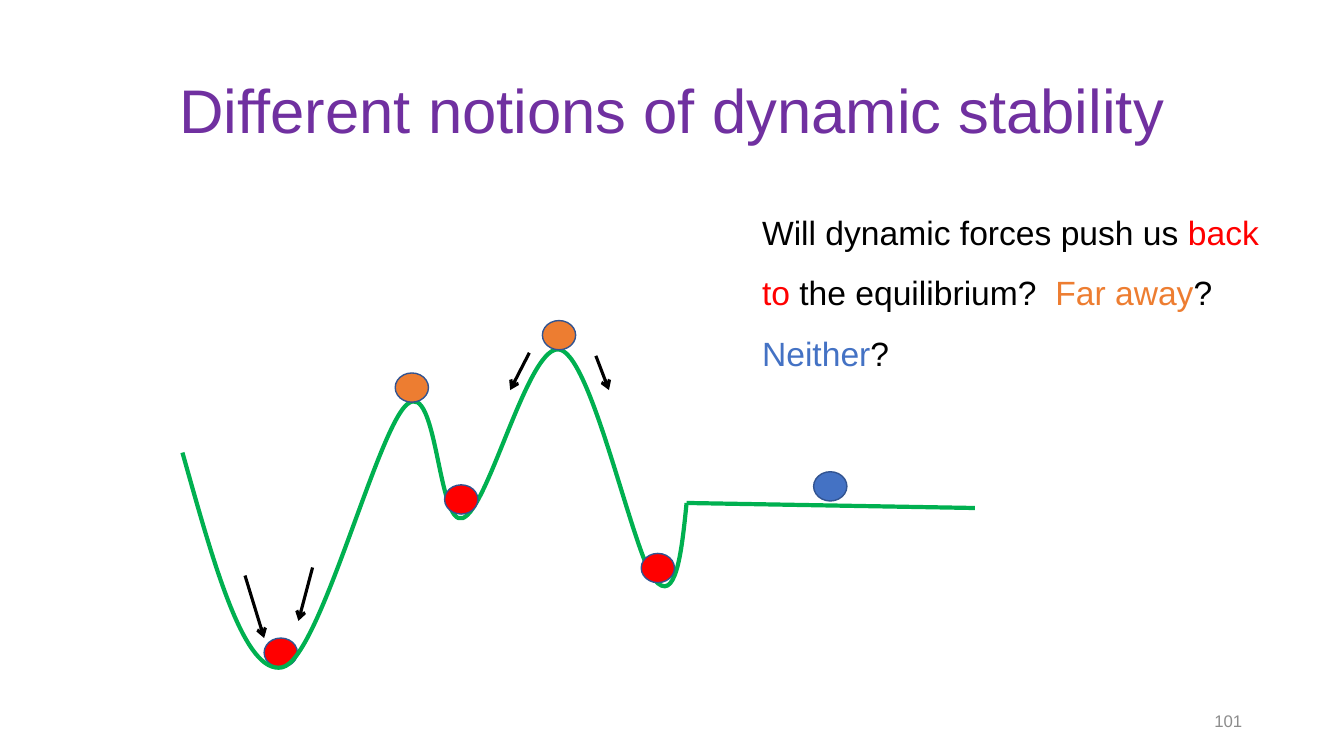
from lxml import etree
from pptx import Presentation
from pptx.dml.color import RGBColor
from pptx.enum.shapes import MSO_CONNECTOR as Conn, MSO_SHAPE as Shape
from pptx.enum.text import MSO_ANCHOR as Anchor, PP_ALIGN as Align
from pptx.oxml.ns import qn
from pptx.util import Inches, Pt

BLACK = RGBColor(0x00, 0x00, 0x00)
RED = RGBColor(0xFF, 0x00, 0x00)
ORANGE = RGBColor(0xED, 0x7D, 0x31)
BLUE = RGBColor(0x44, 0x72, 0xC4)
EDGE = RGBColor(0x32, 0x54, 0x91)
GREEN = RGBColor(0x00, 0xB0, 0x50)
PURPLE = RGBColor(0x70, 0x30, 0xA0)
GRAY = RGBColor(0x8C, 0x8C, 0x8C)

deck = Presentation()
deck.slide_width, deck.slide_height = Inches(13.33), Inches(7.5)
slide = deck.slides.add_slide(deck.slide_layouts[5])
shapes = slide.shapes


def write(box, place, runs, size, align, space, anchor):
    """Move a text shape and fill its only paragraph with (text, colour) runs."""
    box.left, box.top, box.width, box.height = map(Inches, place)
    frame = box.text_frame
    frame.word_wrap = True
    frame.vertical_anchor = anchor
    para = frame.paragraphs[0]
    para.alignment, para.line_spacing = align, space
    for text, color in runs:
        run = para.add_run()
        run.text = text
        run.font.name, run.font.size = "Arial", Pt(size)
        run.font.color.rgb = color


def add_line(start, end, color, width):
    line = shapes.add_connector(Conn.STRAIGHT, *map(Inches, start + end))
    line.line.color.rgb, line.line.width = color, Pt(width)
    etree.SubElement(line._element.spPr, qn("a:effectLst"))
    return line


write(shapes.title, (0.92, 0.4, 11.5, 1.45),
      [("Different notions of dynamic stability", PURPLE)],
      44, Align.CENTER, 0.9, Anchor.MIDDLE)
write(shapes.add_textbox(0, 0, 0, 0), (9.42, 6.95, 3, 0.4),
      [("101", GRAY)], 12, Align.RIGHT, 1.0, Anchor.MIDDLE)
question = [
    ("Will dynamic forces push us ", BLACK), ("back to", RED),
    (" the equilibrium?  ", BLACK), ("Far away", ORANGE),
    ("?  ", BLACK), ("Neither", BLUE), ("?", BLACK),
]
write(shapes.add_textbox(0, 0, 0, 0), (7.46, 1.85, 5.49, 1.92),
      question, 24, Align.LEFT, 1.5, Anchor.TOP)

# Hills and valleys: each Bezier piece is two handles and an end point
start = (1.81, 4.49)
pieces = [
    ((2.12, 5.59), (2.42, 6.7), (2.8, 6.62)),
    ((3.17, 6.54), (3.74, 4.25), (4.04, 4.01)),
    ((4.34, 3.76), (4.34, 5.23), (4.59, 5.14)),
    ((4.85, 5.05), (5.25, 3.37), (5.56, 3.47)),
    ((5.88, 3.57), (6.28, 5.49), (6.49, 5.75)),
    ((6.7, 6.0), (6.76, 5.5), (6.81, 4.99)),
]
ends = [tuple(map(Inches, piece[-1])) for piece in pieces]
draft = shapes.build_freeform(*map(Inches, start))
draft.add_line_segments(ends, close=False)
hills = draft.convert_to_shape()
hills.shadow.inherit = False
hills.fill.background()
hills.line.color.rgb, hills.line.width = GREEN, Pt(3)

# Bend every straight segment into its Bezier piece
segments = list(hills._element.iter(qn("a:lnTo")))
for segment, piece in zip(segments, pieces):
    curve = etree.Element(qn("a:cubicBezTo"))
    for x, y in piece:
        etree.SubElement(curve, qn("a:pt"), x=str(Inches(x) - hills.left),
                         y=str(Inches(y) - hills.top))
    segment.getparent().replace(segment, curve)
add_line(pieces[-1][-1], (9.67, 5.04), GREEN, 3)

balls = [
    (2.62, 6.33, RED), (3.92, 3.7, ORANGE), (4.41, 4.81, RED),
    (6.36, 5.49, RED), (5.38, 3.18, ORANGE), (8.07, 4.68, BLUE),
]
for left, top, color in balls:
    ball = shapes.add_shape(Shape.OVAL, Inches(left), Inches(top), Inches(0.33), Inches(0.29))
    ball.shadow.inherit = False
    ball.fill.solid()
    ball.fill.fore_color.rgb = color
    ball.line.color.rgb, ball.line.width = EDGE, Pt(1)
    if (left, top) == balls[0][:2]:
        hills._element.addprevious(ball._element)  # lowest ball lies behind the curve

forces = [
    ((5.25, 3.5), (5.06, 3.87)), ((5.91, 3.53), (6.04, 3.87)),
    ((2.43, 5.71), (2.62, 6.33)), ((3.1, 5.63), (2.96, 6.16)),
]
for tail, tip in forces:
    arrow = add_line(tail, tip, BLACK, 2.25)
    etree.SubElement(arrow.line._get_or_add_ln(), qn("a:tailEnd"), type="arrow")

deck.save("out.pptx")
